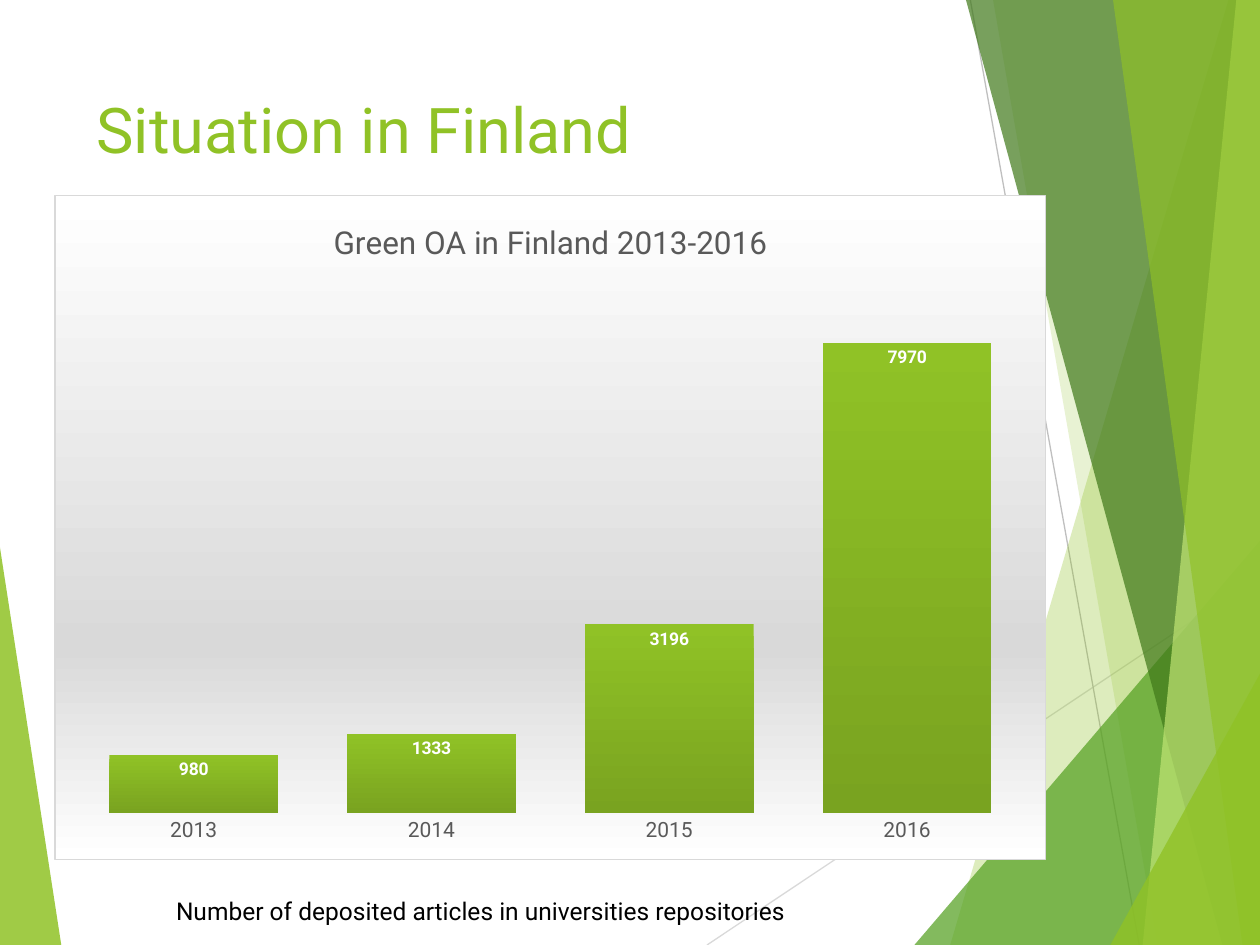
from lxml import etree
from pptx import Presentation
from pptx.chart.data import CategoryChartData
from pptx.dml.color import RGBColor
from pptx.enum.chart import XL_CHART_TYPE, XL_LABEL_POSITION, XL_TICK_MARK
from pptx.enum.text import MSO_ANCHOR
from pptx.oxml import parse_xml
from pptx.oxml.ns import nsdecls, qn
from pptx.util import Pt

WIDTH, HEIGHT = 720, 540
FONT = "Roboto"
GREEN, GREY, PALE = "90C226", "595959", "D9D9D9"


def rgb(color):
    return RGBColor.from_string(color)


def set_font(font, size, color, bold=False):
    font.name, font.size, font.bold = FONT, Pt(size), bold
    font.color.rgb = rgb(color)


def add_text(slide, text, box, size=14, color="000000", wrap=True):
    textbox = slide.shapes.add_textbox(*map(Pt, box))
    frame = textbox.text_frame
    frame.word_wrap = wrap
    frame.vertical_anchor = MSO_ANCHOR.TOP
    run = frame.paragraphs[0].add_run()
    run.text = text
    set_font(run.font, size, color)


def add_facet(slide, points, color, opacity):
    start, *corners = [(Pt(x), Pt(y)) for x, y in points]
    builder = slide.shapes.build_freeform(*start)
    builder.add_line_segments(corners, close=True)
    facet = builder.convert_to_shape()
    facet.shadow.inherit = False
    facet.line.fill.background()
    facet.fill.solid()
    facet.fill.fore_color.rgb = rgb(color)
    srgb = facet.fill._xPr.find(".//" + qn("a:srgbClr"))
    etree.SubElement(srgb, qn("a:alpha"), val=str(opacity * 1000))


def add_thin_line(slide, start, end, color):
    line = slide.shapes.add_connector(1, *map(Pt, start + end))
    line.line.color.rgb = rgb(color)
    line.line.width = Pt(0.75)
    etree.SubElement(line._element.spPr, qn("a:effectLst"))


def add_backdrop(slide, box):
    left, top, width, height = box
    right, bottom = left + width, top + height

    def band(top_x, bottom_x):
        return [(top_x, top), (bottom_x, bottom), (right, bottom), (right, top)]

    def corner(bottom_x, right_y):
        return [(bottom_x, bottom), (right, right_y), (right, bottom)]

    # Left wedge and thin lines
    add_facet(slide, [(left, 313), (left + 35, bottom), (left, bottom)], GREEN, 85)
    add_thin_line(slide, (404, bottom), (right, 329), PALE)
    add_thin_line(slide, (554.5, top), (651, bottom), "BFBFBF")

    # Overlapping facets on the right, back to front
    for points, color, opacity in [
        (band(702, 543), GREEN, 30),
        (band(567.5, 661.5), GREEN, 20),
        (corner(522.5, 309), "54A021", 72),
        (band(552, 698.5), "3F7819", 70),
        (band(706.5, 653), "C0E474", 70),
        (band(636, 710), GREEN, 65),
        (corner(634.5, 385), GREEN, 80),
    ]:
        add_facet(slide, points, color, opacity)


def gradient_properties(stops, border=None):
    """Chart shape properties: a downward gradient and an optional border."""
    stop_xml = "".join(
        f'<a:gs pos="{position * 1000}"><a:srgbClr val="{color}"/></a:gs>'
        for position, color in stops)
    outline = (f'<a:solidFill><a:srgbClr val="{border}"/></a:solidFill>'
               if border else "<a:noFill/>")
    return parse_xml(
        f'<c:spPr {nsdecls("c", "a")}><a:gradFill><a:gsLst>{stop_xml}</a:gsLst>'
        f'<a:lin ang="5400000" scaled="0"/></a:gradFill>'
        f'<a:ln w="{Pt(0.75)}">{outline}</a:ln></c:spPr>')


def fix_plot_area(chart, x, y, w, h):
    plot_area = chart.element.find(".//" + qn("c:plotArea"))
    for old in plot_area.findall(qn("c:layout")):
        plot_area.remove(old)
    sizes = "".join(f'<c:{name} val="{value}"/>'
                    for name, value in zip("xywh", (x, y, w, h)))
    plot_area.insert(0, parse_xml(
        f'<c:layout {nsdecls("c")}><c:manualLayout><c:layoutTarget val="inner"/>'
        f'<c:xMode val="edge"/><c:yMode val="edge"/>{sizes}'
        f'</c:manualLayout></c:layout>'))


def add_article_chart(slide, box):
    heading = "Green OA in Finland 2013-2016"
    data = CategoryChartData()
    data.categories = ["2013", "2014", "2015", "2016"]
    data.add_series(heading, (980, 1333, 3196, 7970))
    chart = slide.shapes.add_chart(
        XL_CHART_TYPE.COLUMN_CLUSTERED, *map(Pt, box), data).chart
    set_font(chart.font, 10, "000000")
    chart.has_legend = False

    # Heading
    title = chart.chart_title.text_frame
    title.text = heading
    set_font(title.paragraphs[0].runs[0].font, 18, GREY)

    # Axes
    years, counts = chart.category_axis, chart.value_axis
    years.major_tick_mark = years.minor_tick_mark = XL_TICK_MARK.NONE
    years.format.line.fill.background()
    set_font(years.tick_labels.font, 12, GREY)
    counts.minimum_scale, counts.maximum_scale = 0, 9000
    counts.has_major_gridlines = False
    counts.visible = False

    # Columns and their values
    plot = chart.plots[0]
    plot.gap_width = 41
    plot.vary_by_categories = False
    articles = plot.series[0]
    labels = articles.data_labels
    labels.show_value = True
    labels.position = XL_LABEL_POSITION.INSIDE_END
    set_font(labels.font, 10, "FFFFFF", bold=True)

    # Gradients
    articles._element.find(qn("c:tx")).addnext(
        gradient_properties([(0, GREEN), (100, "79A320")]))
    chart.element.find(qn("c:chart")).addnext(
        gradient_properties([(0, "FFFFFF"), (68, PALE), (100, "FFFFFF")], PALE))
    fix_plot_area(chart, 0.02, 0.13, 0.96, 0.8)


def main():
    deck = Presentation()
    deck.slide_width, deck.slide_height = Pt(WIDTH), Pt(HEIGHT)
    slide = deck.slides.add_slide(deck.slide_layouts[6])
    add_backdrop(slide, (0, 0, WIDTH, HEIGHT))
    add_text(slide, "Situation in Finland", (48, 48, 500, 104), size=36, color=GREEN)
    add_article_chart(slide, (31, 111.5, 567, 380))
    add_text(slide, "Number of deposited articles in universities repositories",
             (93.5, 508.5, 370, 24), wrap=False)
    deck.save("out.pptx")


if __name__ == "__main__":
    main()
